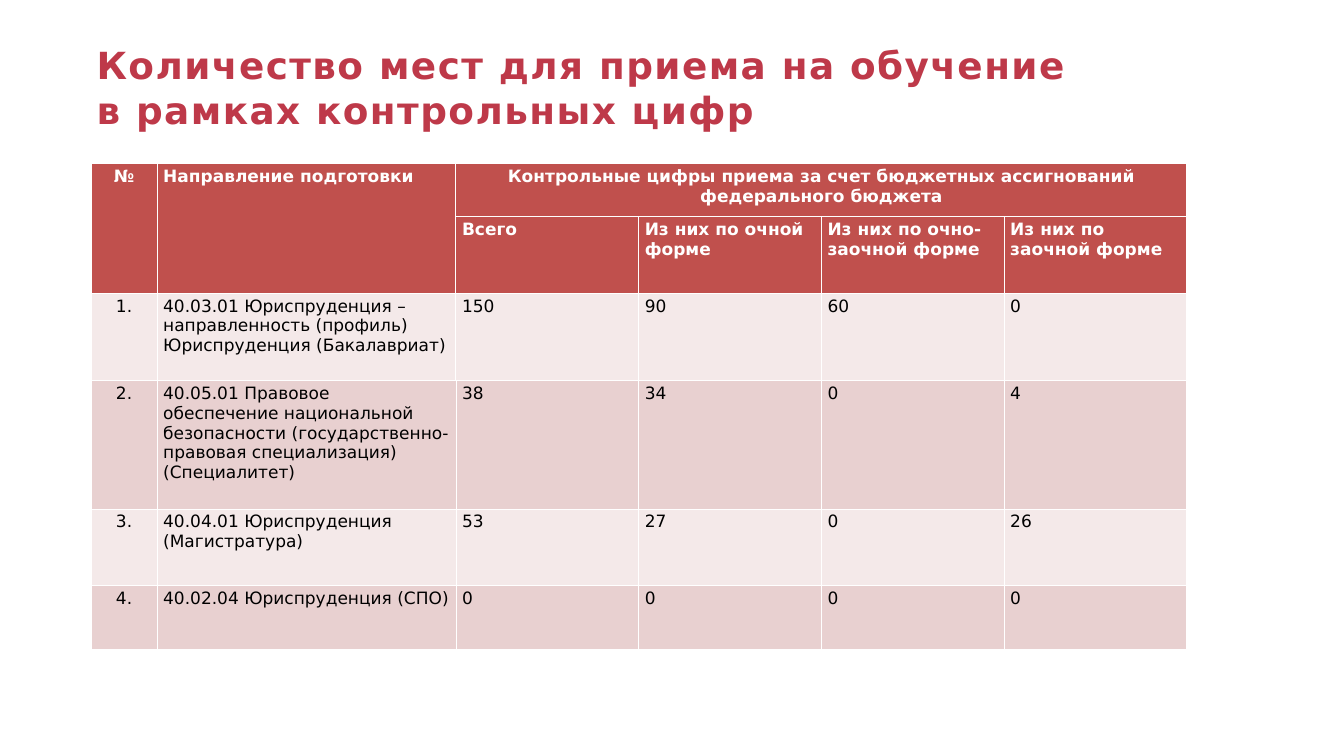
from pptx import Presentation
from pptx.dml.color import RGBColor
from pptx.enum import text
from pptx.oxml import parse_xml
from pptx.oxml.ns import nsdecls
from pptx.util import Inches, Pt

FONT = "DejaVu Sans"
COLORS = {"title": "BE3949", "header": "C0504D", "light": "F4E9E9",
          "dark": "E8D0D0", "line": "FFFFFF", "header_text": "FFFFFF",
          "body_text": "000000"}

COLUMNS = [1.08, 4.89] + [2.99] * 4
ROWS = [0.87, 1.25, 1.43, 2.1, 1.25, 1.05]
HEADER_ROWS = 2
PLACES = [
    ["№", "Направление подготовки",
     "Контрольные цифры приема за счет бюджетных ассигнований федерального бюджета",
     "", "", ""],
    ["", "", "Всего", "Из них по очной форме", "Из них по очно-заочной форме",
     "Из них по заочной форме"],
    ["1.", "40.03.01 Юриспруденция – направленность (профиль) "
     "Юриспруденция (Бакалавриат)", "150", "90", "60", "0"],
    ["2.", "40.05.01 Правовое обеспечение национальной\n"
     "безопасности (государственно-правовая специализация) (Специалитет)",
     "38", "34", "0", "4"],
    ["3.", "40.04.01 Юриспруденция (Магистратура)", "53", "27", "0", "26"],
    ["4.", "40.02.04 Юриспруденция (СПО)", "0", "0", "0", "0"],
]


def color(name):
    return RGBColor.from_string(COLORS[name])


def style_font(font, size, name, bold):
    font.name, font.size, font.bold = FONT, Pt(size), bold
    font.color.rgb = color(name)


def add_title(s, left, top, width, height):
    tf = s.shapes.add_textbox(*map(Inches, (left, top, width, height))).text_frame
    tf.word_wrap = True
    tf.margin_left = tf.margin_right = tf.margin_bottom = 0
    tf.margin_top = Inches(0.01)
    tf.text = "Количество мест для приема на обучение в рамках контрольных цифр"
    r = tf.paragraphs[0].runs[0]
    style_font(r.font, 44, "title", True)
    r.font._element.set("spc", "170")


def set_borders(cell, widths):
    """Draw the given sides, listed in schema order, with widths in points."""
    tcPr = cell._tc.get_or_add_tcPr()
    for i, (side, width) in enumerate(widths.items()):
        tcPr.insert(i, parse_xml(
            f'<a:ln{side} {nsdecls("a")} w="{Pt(width)}"><a:solidFill>'
            f'<a:srgbClr val="{COLORS["line"]}"/></a:solidFill></a:ln{side}>'))


def fill_cell(cell, value, row, col):
    header = row < HEADER_ROWS
    cell.fill.solid()
    cell.fill.fore_color.rgb = color(
        "header" if header else ("light", "dark")[row % 2])
    cell.text = value
    for p in cell.text_frame.paragraphs:
        if col == 0 or (row == 0 and col == 2):
            p.alignment = text.PP_ALIGN.CENTER
        for r in p.runs:
            style_font(r.font, 20, "header_text" if header else "body_text", header)
    side = 1.5 if row <= HEADER_ROWS else 1
    widths = {"L": side, "R": side}
    if row == 1 and col > 1:
        widths["T"] = 1.5
    if row == 0 and col > 1:
        widths["B"] = 1.5
    set_borders(cell, widths)


def add_places_table(s, left, top):
    box = map(Inches, (left, top, sum(COLUMNS), sum(ROWS)))
    table = s.shapes.add_table(len(ROWS), len(COLUMNS), *box).table
    table.first_row = table.horz_banding = False
    for column, width in zip(table.columns, COLUMNS):
        column.width = Inches(width)
    for row, height in zip(table.rows, ROWS):
        row.height = Inches(height)
    for i, values in enumerate(PLACES):
        for j, value in enumerate(values):
            fill_cell(table.cell(i, j), value, i, j)
    for j in (0, 1):
        table.cell(0, j).merge(table.cell(1, j))
    table.cell(0, 2).merge(table.cell(0, 5))


def main():
    prs = Presentation()
    prs.slide_width, prs.slide_height = Inches(21.99), Inches(12.37)
    s = prs.slides.add_slide(prs.slide_layouts[6])
    add_title(s, 1.58, 0.68, 16.17, 1.5)
    add_places_table(s, 1.49, 2.68)
    prs.save("out.pptx")


if __name__ == "__main__":
    main()
